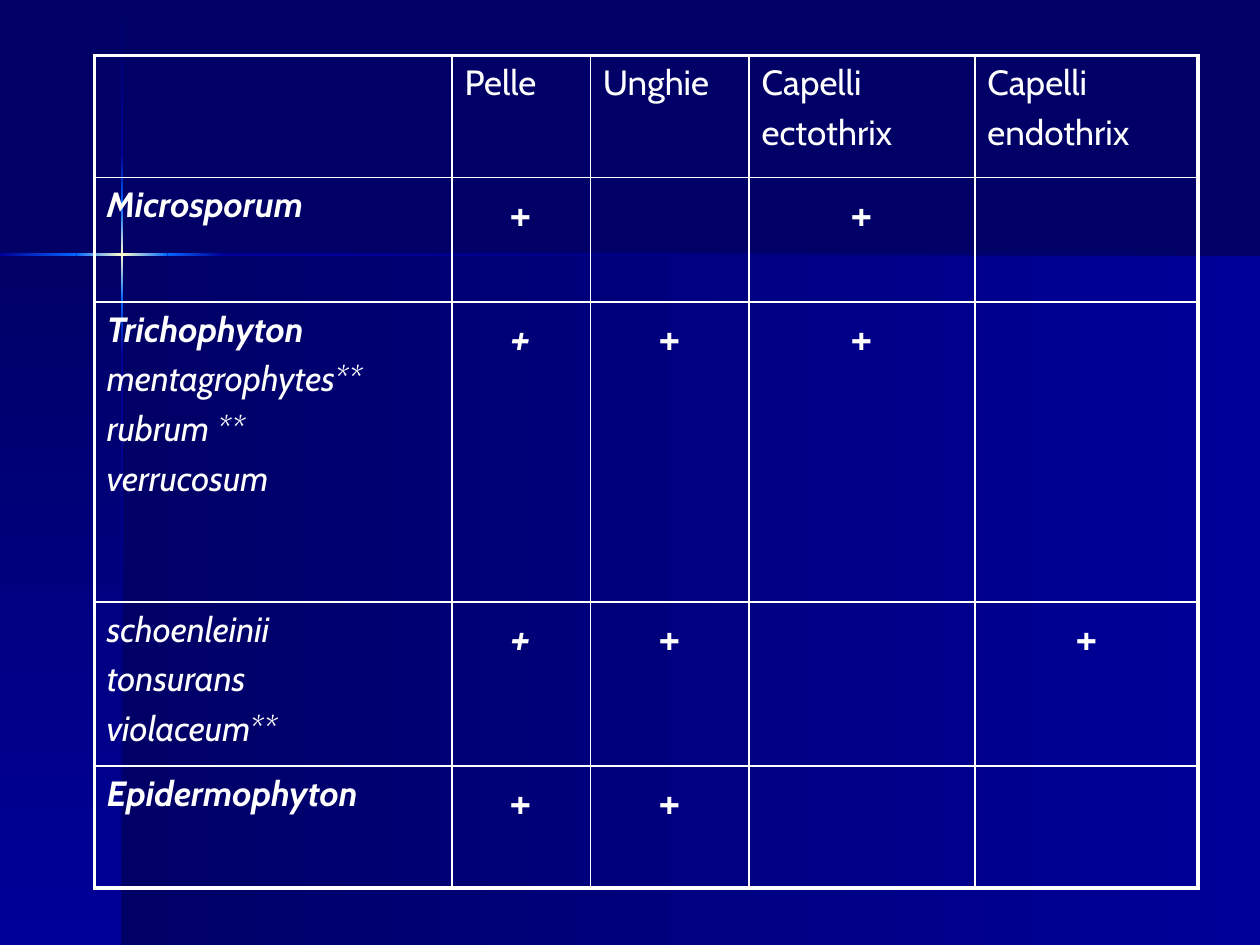
"""Build a slide with a table of dermatophytes and the tissues they infect."""
from dataclasses import dataclass
from itertools import pairwise

from lxml import etree
from pptx import Presentation
from pptx.dml.color import RGBColor
from pptx.enum.shapes import MSO_SHAPE
from pptx.enum.text import PP_ALIGN
from pptx.oxml.ns import qn
from pptx.util import Cm, Pt

RECTANGLE = MSO_SHAPE.RECTANGLE
CENTER = PP_ALIGN.CENTER
LEFT = PP_ALIGN.LEFT

COLORS = {
    "night": "000066",
    "navy": "000099",
    "azure": "0066FF",
    "cream": "FFFFCC",
    "white": "FFFFFF",
}
FONT = "Cabin"
SLIDE_WIDTH, SLIDE_HEIGHT = 25.4, 19.05
CROSS_X, CROSS_Y, BEAM = 2.46, 5.13, 0.05
HORIZONTAL, VERTICAL = 0, 90
COLUMN_WIDTHS = [7.21, 2.79, 3.2, 4.55, 4.5]
ROW_HEIGHTS = [2.46, 2.51, 6.05, 3.3, 2.46]
THIN, THICK = 1, 2.25

FADE_IN = ["night", "navy"]
GLOW_IN = ["navy", "azure"]
FLARE = ["azure", "cream", "azure"]
GLOW_OUT = GLOW_IN[::-1]
FADE_OUT = FADE_IN[::-1]
VERTICAL_STOPS = [0.03, 3.07, 4.19, 6.05, 7.16, SLIDE_HEIGHT]
VERTICAL_BEAMS = [FADE_IN, GLOW_IN, FLARE, GLOW_OUT, FADE_OUT]
HORIZONTAL_STOPS = [0, 1.54, 3.38, 4.5, SLIDE_WIDTH]
HORIZONTAL_BEAMS = [GLOW_IN, FLARE, GLOW_OUT, FADE_OUT]


@dataclass(frozen=True)
class Line:
    text: str
    bold: bool = False
    italic: bool = False
    size: int = 20
    alignment: PP_ALIGN = LEFT


@dataclass(frozen=True)
class Panel:
    left: float
    top: float
    width: float
    height: float
    colors: list[str]
    angle: int


def genus(name: str) -> Line:
    """Return a line for a genus name."""
    return Line(name, bold=True, italic=True)


def species(name: str) -> Line:
    """Return a line for a species name."""
    return Line(name, italic=True)


PLUS = [Line("+", size=28, alignment=CENTER)]
ITALIC_PLUS = [Line("+", italic=True, size=28, alignment=CENTER)]
ROWS = [
    [[], [Line("Pelle")], [Line("Unghie")],
     [Line("Capelli"), Line("ectothrix")], [Line("Capelli"), Line("endothrix")]],
    [[genus("Microsporum")], PLUS, [], PLUS, []],
    [[genus("Trichophyton"), species("mentagrophytes**"), species("rubrum **"),
      species("verrucosum")], ITALIC_PLUS, PLUS, PLUS, []],
    [[species("schoenleinii"), species("tonsurans"), species("violaceum**")],
     ITALIC_PLUS, PLUS, [], PLUS],
    [[genus("Epidermophyton")], PLUS, PLUS, [], []],
]


def background_panels() -> list[Panel]:
    """Return the two fields and the beams that cross at the flare."""
    field_height = SLIDE_HEIGHT - CROSS_Y
    panels = [
        Panel(CROSS_X, CROSS_Y, SLIDE_WIDTH - CROSS_X, field_height, FADE_IN, HORIZONTAL),
        Panel(0, CROSS_Y, CROSS_X, field_height, FADE_IN, VERTICAL),
    ]
    for (start, end), colors in zip(pairwise(VERTICAL_STOPS), VERTICAL_BEAMS):
        panels.append(Panel(CROSS_X - BEAM / 2, start, BEAM, end - start, colors, VERTICAL))
    for (start, end), colors in zip(pairwise(HORIZONTAL_STOPS), HORIZONTAL_BEAMS):
        panels.append(Panel(start, CROSS_Y - BEAM / 2, end - start, BEAM, colors, HORIZONTAL))
    return panels


def draw_panel(slide, panel: Panel) -> None:
    """Draw a rectangle with an evenly spaced gradient."""
    shape = slide.shapes.add_shape(
        RECTANGLE, Cm(panel.left), Cm(panel.top), Cm(panel.width), Cm(panel.height))
    shape.shadow.inherit = False
    shape.line.fill.background()
    shape.fill.gradient()
    shape.fill.gradient_angle = -panel.angle % 360
    stops = shape._element.spPr.find(f".//{qn('a:gsLst')}")
    for stop in list(stops):
        stops.remove(stop)
    for index, color in enumerate(panel.colors):
        position = 100000 * index // (len(panel.colors) - 1)
        stop = etree.SubElement(stops, qn("a:gs"), pos=str(position))
        etree.SubElement(stop, qn("a:srgbClr"), val=COLORS[color])


def set_borders(cell, widths: dict[str, float]) -> None:
    """Give each side of a cell a white line of its own width."""
    properties = cell._tc.get_or_add_tcPr()
    for index, (side, width) in enumerate(widths.items()):
        line = etree.Element(qn(f"a:ln{side}"), w=str(Pt(width)))
        fill = etree.SubElement(line, qn("a:solidFill"))
        etree.SubElement(fill, qn("a:srgbClr"), val=COLORS["white"])
        properties.insert(index, line)


def write_lines(cell, lines: list[Line]) -> None:
    """Write one paragraph per line into a cell."""
    frame = cell.text_frame
    for index, line in enumerate(lines):
        paragraph = frame.add_paragraph() if index else frame.paragraphs[0]
        paragraph.alignment = line.alignment
        if index:
            paragraph.space_before = Pt(4)
        run = paragraph.add_run()
        run.text = line.text
        run.font.name = FONT
        run.font.size = Pt(line.size)
        run.font.bold = line.bold
        run.font.italic = line.italic
        run.font.color.rgb = RGBColor.from_string(COLORS["white"])


def draw_table(slide) -> None:
    """Draw the table with a thick frame and thin inner lines."""
    table = slide.shapes.add_table(
        len(ROW_HEIGHTS), len(COLUMN_WIDTHS), Cm(1.9), Cm(1.12),
        Cm(sum(COLUMN_WIDTHS)), Cm(sum(ROW_HEIGHTS))).table
    table.first_row = False
    table.horz_banding = False
    for column, width in zip(table.columns, COLUMN_WIDTHS):
        column.width = Cm(width)
    for row, height in zip(table.rows, ROW_HEIGHTS):
        row.height = Cm(height)
    last_row, last_column = len(ROW_HEIGHTS) - 1, len(COLUMN_WIDTHS) - 1
    for row_index, row in enumerate(ROWS):
        for column_index, lines in enumerate(row):
            cell = table.cell(row_index, column_index)
            cell.fill.background()
            set_borders(cell, {
                "L": THICK if column_index == 0 else THIN,
                "R": THICK if column_index == last_column else THIN,
                "T": THICK if row_index == 0 else THIN,
                "B": THICK if row_index == last_row else THIN,
            })
            write_lines(cell, lines)


def main() -> None:
    """Build and save the presentation."""
    presentation = Presentation()
    presentation.slide_width = Cm(SLIDE_WIDTH)
    presentation.slide_height = Cm(SLIDE_HEIGHT)
    slide = presentation.slides.add_slide(presentation.slide_layouts[6])
    slide.background.fill.solid()
    slide.background.fill.fore_color.rgb = RGBColor.from_string(COLORS["night"])
    for panel in background_panels():
        draw_panel(slide, panel)
    draw_table(slide)
    presentation.save("out.pptx")


if __name__ == "__main__":
    main()
